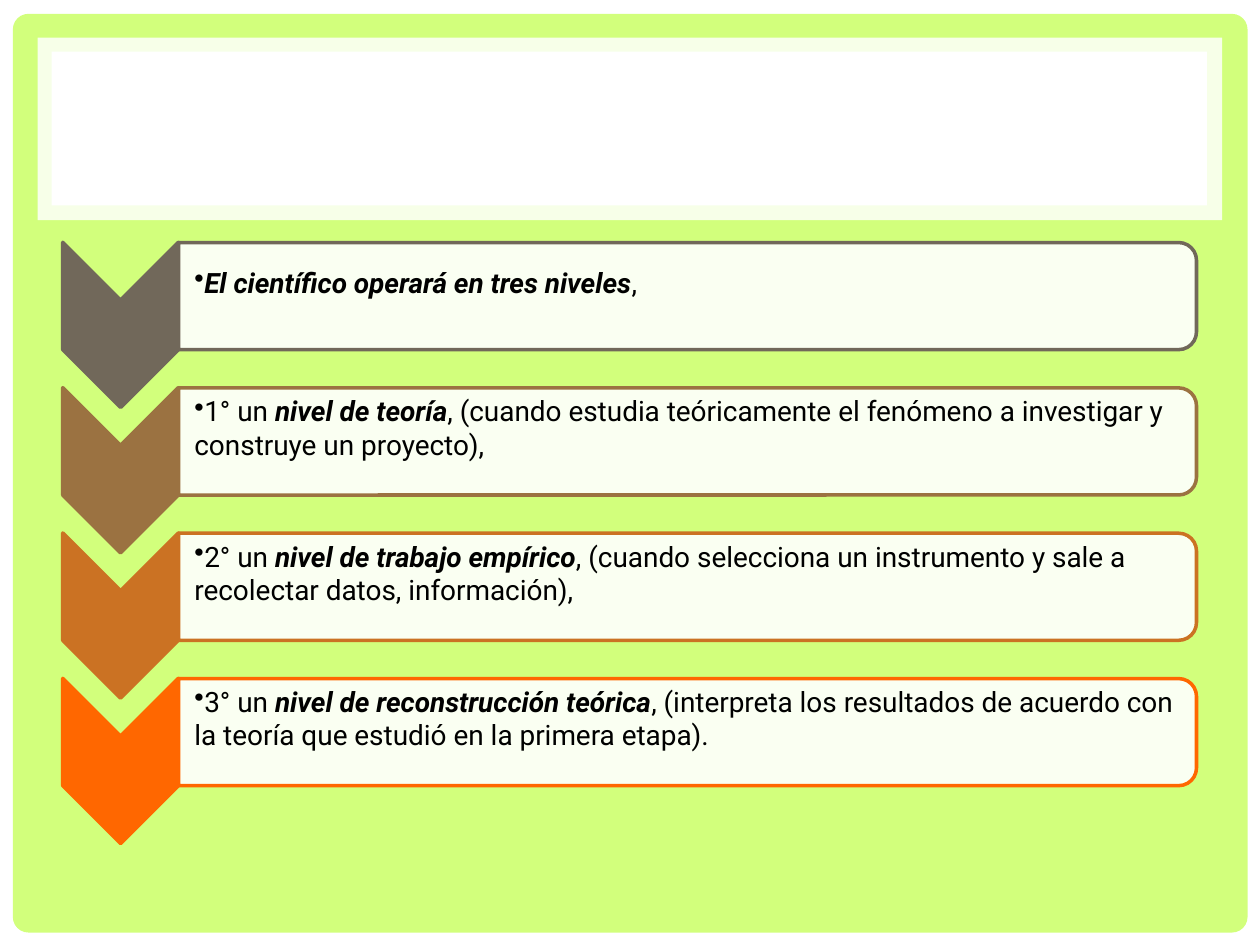
"""Build a slide on the three levels at which a scientist operates."""
from dataclasses import dataclass

from lxml.etree import SubElement
from pptx import Presentation
from pptx.dml.color import RGBColor
from pptx.enum.shapes import MSO_SHAPE
from pptx.enum.text import MSO_ANCHOR
from pptx.oxml.ns import qn
from pptx.shapes.autoshape import Shape
from pptx.slide import Slide
from pptx.util import Cm, Pt

COLOURS = {
    "lime": "D2FF7C",
    "white": "FFFFFF",
    "black": "000000",
    "taupe": "71685A",
    "brown": "9B7241",
    "copper": "CB7223",
    "orange": "FF6700",
}
FONT = "Roboto"
ROW_PITCH = 2.93


@dataclass(frozen=True)
class Box:
    """Position and size in centimetres."""
    left: float
    top: float
    width: float
    height: float

    @classmethod
    def centred(cls, x: float, y: float, width: float, height: float) -> "Box":
        return cls(x - width / 2, y - height / 2, width, height)

    def lengths(self) -> tuple[Cm, Cm, Cm, Cm]:
        return Cm(self.left), Cm(self.top), Cm(self.width), Cm(self.height)


@dataclass(frozen=True)
class Panel:
    """A borderless area of the slide frame."""
    box: Box
    colour: str
    kind: MSO_SHAPE = MSO_SHAPE.RECTANGLE
    opacity: int = 100


@dataclass(frozen=True)
class Level:
    """One row, with its emphasised words between a lead and a tail."""
    colour: str
    lead: str
    emphasis: str
    tail: str


PANELS = [
    Panel(Box(0, 0, 25.4, 19.05), "white"),
    Panel(Box(0.26, 0.28, 24.89, 18.52), "lime", MSO_SHAPE.ROUNDED_RECTANGLE),
    Panel(Box(0.76, 0.76, 23.88, 3.68), "white", opacity=83),
    Panel(Box(1.04, 1.04, 23.29, 3.1), "white"),
]
LEVELS = [
    Level("taupe", "", "El científico operará en tres niveles", ","),
    Level("brown", "1° un ", "nivel de teoría",
          ", (cuando estudia teóricamente el fenómeno a investigar y construye un proyecto),"),
    Level("copper", "2° un ", "nivel de trabajo empírico",
          ", (cuando selecciona un instrumento y sale a recolectar datos, información),"),
    Level("orange", "3° un ", "nivel de reconstrucción teórica",
          ", (interpreta los resultados de acuerdo con la teoría que estudió en la primera etapa)."),
]


def colour_of(name: str) -> RGBColor:
    return RGBColor.from_string(COLOURS[name])


def add_filled(slide: Slide, kind: MSO_SHAPE, box: Box, fill: str,
               opacity: int = 100, outline: str | None = None) -> Shape:
    shape = slide.shapes.add_shape(kind, *box.lengths())
    shape.shadow.inherit = False
    shape.fill.solid()
    shape.fill.fore_color.rgb = colour_of(fill)
    if opacity < 100:
        tint = shape.fill._xPr.find(qn("a:solidFill"))[0]
        SubElement(tint, qn("a:alpha"), val=str(opacity * 1000))
    if outline:
        shape.line.color.rgb = colour_of(outline)
        shape.line.width = Pt(2)
    else:
        shape.line.fill.background()
    return shape


def add_panel(slide: Slide, panel: Panel) -> None:
    shape = add_filled(slide, panel.kind, panel.box, panel.colour, panel.opacity)
    if panel.kind == MSO_SHAPE.ROUNDED_RECTANGLE:
        shape.adjustments[0] = 0.017


def add_statement(slide: Slide, level: Level, box: Box) -> None:
    frame = slide.shapes.add_textbox(*box.lengths()).text_frame
    frame.word_wrap = True
    frame.vertical_anchor = MSO_ANCHOR.MIDDLE
    frame.margin_left, frame.margin_right = Cm(0.31), Cm(0.03)
    frame.margin_top, frame.margin_bottom = Cm(0.03), Cm(0.58)
    statement = frame.paragraphs[0]
    properties = statement._p.get_or_add_pPr()
    properties.set("marL", "0")
    properties.set("indent", "0")
    SubElement(properties, qn("a:buChar"), char="•")
    for words in filter(None, (level.lead, level.emphasis, level.tail)):
        run = statement.add_run()
        run.text = words
        run.font.name = FONT
        run.font.size = Pt(16)
        run.font.color.rgb = colour_of("black")
        run.font.bold = run.font.italic = words == level.emphasis


def add_level(slide: Slide, level: Level, offset: float) -> None:
    chevron = add_filled(slide, MSO_SHAPE.CHEVRON, Box.centred(2.43, 6.55 + offset, 3.33, 2.33),
                         level.colour, outline=level.colour)
    bar = add_filled(slide, MSO_SHAPE.ROUND_2_SAME_RECTANGLE,
                     Box.centred(13.86, 5.97 + offset, 2.16, 20.52),
                     "white", 90, level.colour)
    chevron.rotation = bar.rotation = 90
    add_statement(slide, level, Box(3.61, 4.98 + offset, 20.42, 1.96))


def main() -> None:
    deck = Presentation()
    deck.slide_width, deck.slide_height = Cm(25.4), Cm(19.05)
    slide = deck.slides.add_slide(deck.slide_layouts[6])
    slide.background.fill.solid()
    slide.background.fill.fore_color.rgb = colour_of("lime")
    for panel in PANELS:
        add_panel(slide, panel)
    for row, level in enumerate(LEVELS):
        add_level(slide, level, row * ROW_PITCH)
    deck.save("out.pptx")


if __name__ == "__main__":
    main()
